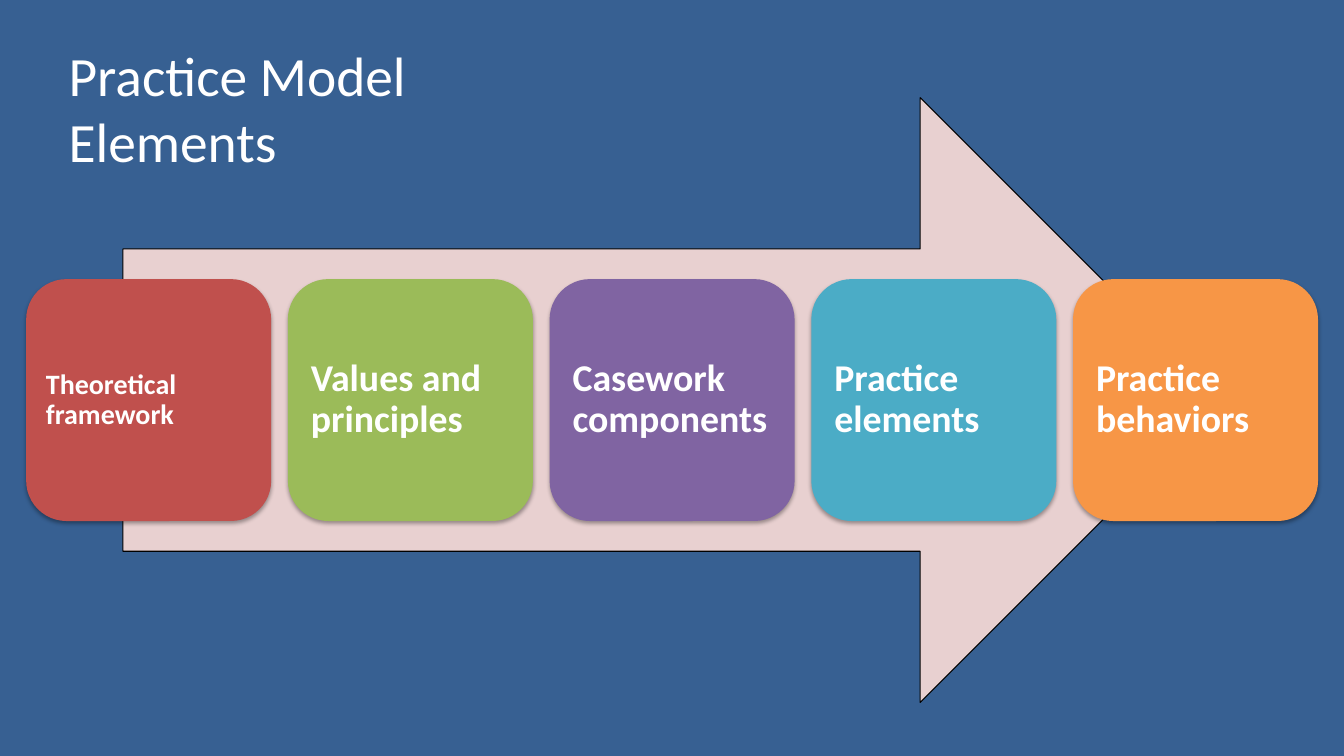
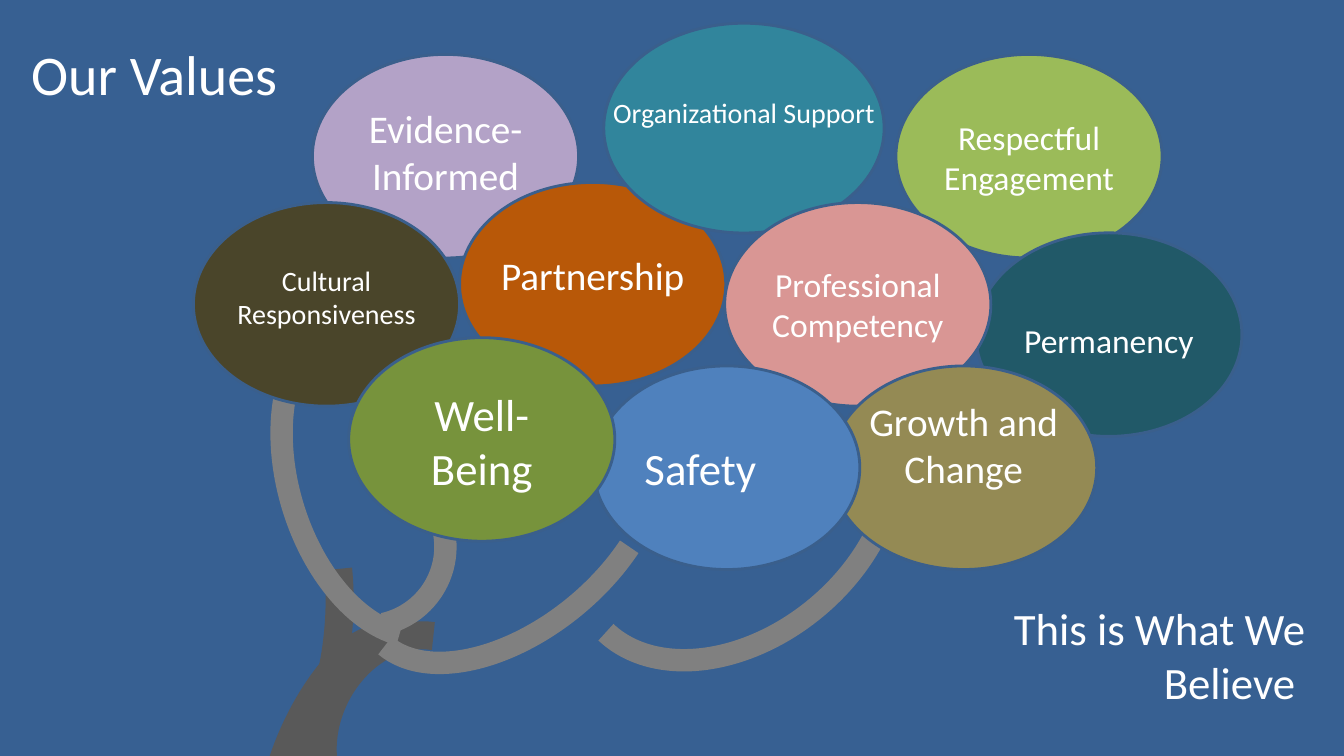
from collections import namedtuple

from lxml.etree import SubElement
from pptx import Presentation
from pptx.dml.color import RGBColor
from pptx.enum.shapes import MSO_SHAPE
from pptx.enum.text import MSO_ANCHOR, MSO_AUTO_SIZE, PP_ALIGN
from pptx.oxml.ns import qn
from pptx.util import Pt

COLORS = {
    "background": "376092", "text": "FFFFFF", "outline": "3A5F8C", "black": "000000",
    "arrow": "E8D0D0", "trunk": "595959", "branch": "808080",
    "red": "C0504D", "green": "9BBB59", "purple": "8064A2", "aqua": "4BACC6",
    "orange": "F79646", "teal": "215968", "lilac": "B3A2C7", "rust": "B85808",
    "sea": "31859C", "rose": "D99694", "khaki": "948A54", "brown": "4A452A",
    "blue": "4F81BD", "leaf": "77933C",
}
FONT = "Calibri"
Box = namedtuple("Box", "left top width height")
Arc = namedtuple("Arc", "left top width height rotation start end")
Value = namedtuple("Value", "text left top color size label_width label_drop")

SLIDE = Box(0, 0, 960, 540)
CROWN = Box(0, 0, 190.1, 145.4)
WIDE_CROWN = Box(0, 0, 200.2, 149.8)

ELEMENTS = [
    ("Theoretical framework", "red", 20, 5.7),
    ("Values and principles", "green", 27, 8),
    ("Casework components", "purple", 27, 8),
    ("Practice elements", "aqua", 27, 8),
    ("Practice behaviors", "orange", 27, 8),
]
TRUNK = [
    Arc(233.3, 451.4, 117.4, 144.7, 205.9, 183.33, 46.96),
    Arc(174.2, 353.5, 67.7, 185, 4.7, 183.33, 55.19),
    Arc(209.5, 449.3, 61.2, 163.4, 205.9, 183.33, 55.19),
]
BRANCHES = [
    Arc(434.9, 237.6, 180.7, 254.2, 50.2, 191.55, 51.93),
    Arc(205.9, 223.2, 143.3, 234.7, 163.3, 169.66, 45.42),
    Arc(292.3, 252.7, 145.4, 247.7, 50.2, 191.55, 51.93),
    Arc(205.2, 334.1, 113, 113, 0, 166.78, 46.45),
]
VALUES = [
    Value("Respectful Engagement", 640, 38.9, "green", 24, 190, 41),
    Value("Permanency", 697, 166.3, "teal", 24, 208, 59),
    Value("Evidence-Informed", 223.2, 38.9, "lilac", 28, 181, 31.7),
    Value("Partnership", 328.3, 130.3, "rust", 28, 203, 46),
    Value("Organizational Support", 431.3, 16.6, "sea", 20, 210, 48.2),
    Value("Professional Competency", 517.7, 144.7, "rose", 24, 186, 40.3),
    Value("Growth and Change", 593.3, 261.4, "khaki", 28, 161.3, 18.7),
    Value("Cultural Responsiveness", 138.2, 144.7, "brown", 20, 200, 39.6),
    Value("Safety", 424.1, 261.4, "blue", 32, 131.8, 49.7),
    Value("Well-Being", 249.1, 241.2, "leaf", 32, 131.8, 31.7),
]


def rgb(name):
    """Return the named colour."""
    return RGBColor.from_string(COLORS[name])


def apply_format(target, values):
    """Set each attribute in values on the target."""
    for name, value in values.items():
        setattr(target, name, value)


def points(box):
    """Return the four lengths of a box in points."""
    return [Pt(length) for length in box[:4]]


def write(shape, text, size, align=PP_ALIGN.LEFT, anchor=MSO_ANCHOR.TOP, bold=False):
    """Write one formatted paragraph in a shape and return it."""
    frame = shape.text_frame
    apply_format(frame, {"text": text, "word_wrap": True, "vertical_anchor": anchor,
                         "auto_size": MSO_AUTO_SIZE.NONE})
    paragraph = frame.paragraphs[0]
    paragraph.alignment = align
    apply_format(paragraph.font, {"name": FONT, "size": Pt(size), "bold": bold})
    paragraph.font.color.rgb = rgb("text")
    return paragraph


def add_figure(slide, kind, box, fill=None, line=None, weight=0):
    """Add a preset shape with an optional fill and outline."""
    shape = slide.shapes.add_shape(kind, *points(box))
    shape.shadow.inherit = False
    for paint, color in ((shape.fill, fill), (shape.line.fill, line)):
        if color:
            paint.solid()
            paint.fore_color.rgb = rgb(color)
        else:
            paint.background()
    if line:
        shape.line.width = Pt(weight)
    return shape


def add_shadow(shape):
    """Give a shape a soft shadow below it."""
    effects = shape._element.spPr.find(qn("a:effectLst"))
    shadow = SubElement(effects, qn("a:outerShdw"), blurRad=str(Pt(3.1)),
                        dist=str(Pt(1.8)), dir="5400000", rotWithShape="0")
    color = SubElement(shadow, qn("a:srgbClr"), val=COLORS["black"])
    SubElement(color, qn("a:alpha"), val="35000")


def add_label(slide, box, text, size, align):
    """Add a wrapped text box."""
    write(slide.shapes.add_textbox(*points(box)), text, size, align)


def add_titled_slide(presentation, title, box, size):
    """Add a slide with its title moved to the box."""
    slide = presentation.slides.add_slide(presentation.slide_layouts[5])
    shape = slide.shapes.title
    apply_format(shape, dict(zip(Box._fields, points(box))))
    write(shape, title, size, anchor=MSO_ANCHOR.MIDDLE)
    return slide


def add_process(slide, box):
    """Place the arrow and the row of element cards in the box."""
    arrow = Box(box.left + 69.1, box.top, 785.5, box.height)
    add_figure(slide, MSO_SHAPE.RIGHT_ARROW, arrow, "arrow", "black", 0.75)
    card_width, card_height = 175, box.height * 0.4
    step = (box.width - card_width) / (len(ELEMENTS) - 1)
    top = box.top + (box.height - card_height) / 2
    for index, (text, color, size, inset) in enumerate(ELEMENTS):
        place = Box(box.left + index * step, top, card_width, card_height)
        card = add_figure(slide, MSO_SHAPE.ROUNDED_RECTANGLE, place, color)
        add_shadow(card)
        paragraph = write(card, text, size, anchor=MSO_ANCHOR.MIDDLE, bold=True)
        paragraph.line_spacing = 0.9
        margins = ("margin_left", "margin_top", "margin_right", "margin_bottom")
        apply_format(card.text_frame, dict.fromkeys(margins, Pt(inset)))


def add_limbs(slide, box, arcs, color, weight):
    """Draw thick arcs of one colour in the box."""
    for arc in arcs:
        place = Box(box.left + arc.left, box.top + arc.top, arc.width, arc.height)
        limb = add_figure(slide, MSO_SHAPE.ARC, place, None, color, weight)
        limb.rotation = arc.rotation
        limb.adjustments[0] = arc.start
        limb.adjustments[1] = arc.end


def add_crown(slide, box, value):
    """Add one value as an ellipse with a label centred across it."""
    size = WIDE_CROWN if value.color == "sea" else CROWN
    left, top = box.left + value.left, box.top + value.top
    add_figure(slide, MSO_SHAPE.OVAL, Box(left, top, size.width, size.height),
               value.color, "outline", 2)
    label = Box(left + (size.width - value.label_width) / 2, top + value.label_drop,
                value.label_width, value.size * 2.4 + 7.2)
    align = PP_ALIGN.LEFT if value.text == "Safety" else PP_ALIGN.CENTER
    add_label(slide, label, value.text, value.size, align)


def add_tree(slide, box):
    """Place the trunk, branches and values of the tree in the box."""
    add_limbs(slide, box, TRUNK, "trunk", 20)
    add_limbs(slide, box, BRANCHES, "branch", 16)
    for value in VALUES:
        add_crown(slide, box, value)


def main():
    """Build and save the presentation."""
    presentation = Presentation()
    apply_format(presentation, {"slide_width": Pt(SLIDE.width),
                                "slide_height": Pt(SLIDE.height)})
    background = presentation.slide_master.background.fill
    background.solid()
    background.fore_color.rgb = rgb("background")

    slide = add_titled_slide(presentation, "Practice Model\vElements",
                             Box(41.8, 31.7, 784, 90), 39.6)
    add_process(slide, Box(18.7, 69.8, 922.8, 432))

    slide = add_titled_slide(presentation, "Our Values", Box(15.1, 24.5, 193, 55.4), 40)
    add_tree(slide, SLIDE)
    add_label(slide, Box(699.8, 425.5, 239.8, 85), "This is What We Believe ", 32,
              PP_ALIGN.RIGHT)
    presentation.save("out.pptx")


if __name__ == "__main__":
    main()
